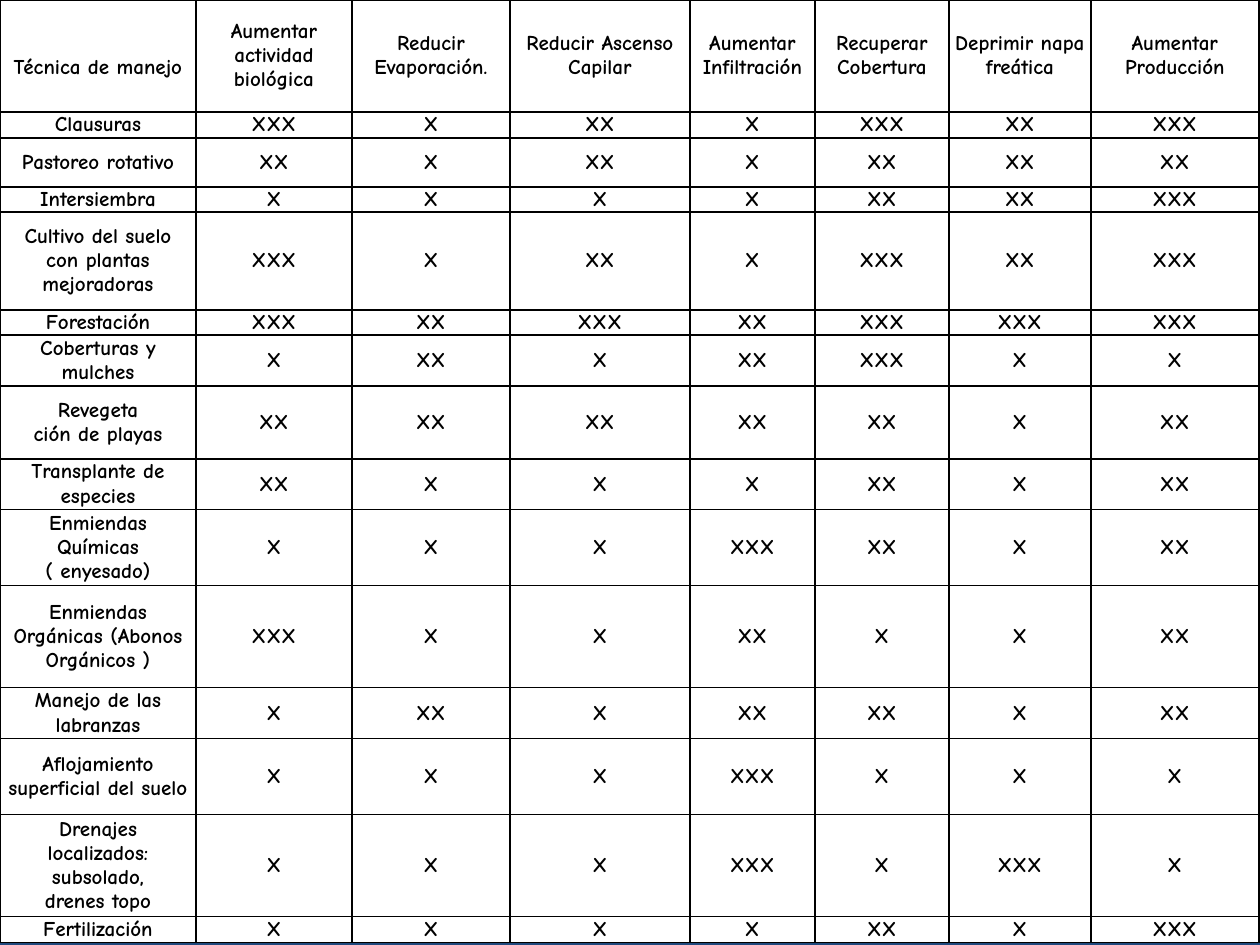
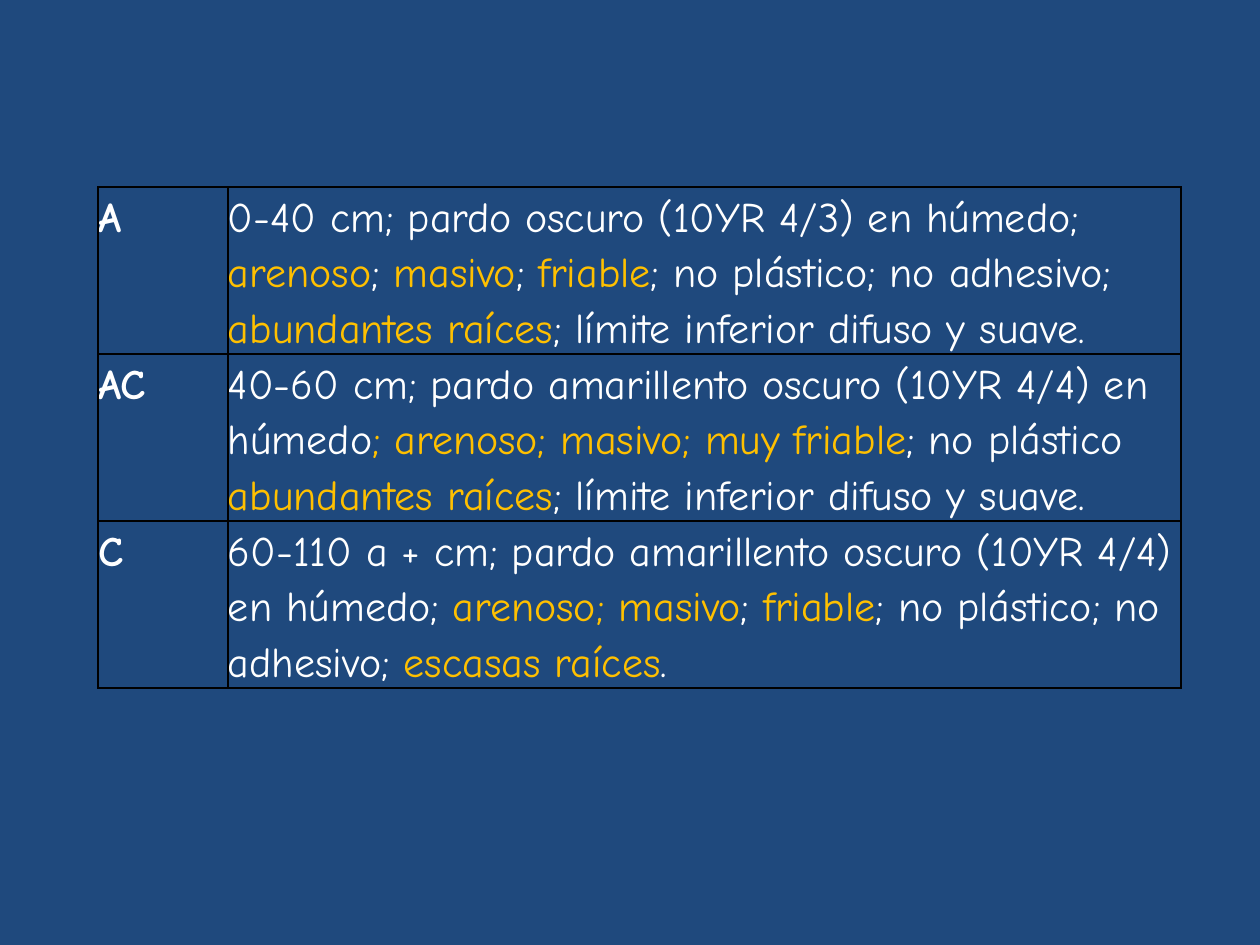
"""Builds two slides of tables on soil management techniques and soil horizons."""
from dataclasses import dataclass
from typing import NamedTuple

from lxml import etree
from pptx import Presentation
from pptx import util as u
from pptx.dml.color import RGBColor
from pptx.enum import text
from pptx.oxml.ns import qn


@dataclass(frozen=True)
class Theme:
    font: str = "Comic Neue"
    background: str = "1F497D"
    paper: str = "FFFFFF"
    ink: str = "000000"
    light: str = "FFFFFF"
    highlight: str = "FFC000"
    border: str = "000000"
    border_points: int = 1
    matrix_size: int = 12
    horizon_size: int = 24
    horizon_spacing: float = 1.15
    horizon_space_after: int = 10


class Technique(NamedTuple):
    lines: tuple[str, ...]
    height: int
    scores: str


class Goal(NamedTuple):
    lines: tuple[str, ...]
    width: int


class Horizon(NamedTuple):
    name: str
    spans: tuple[str, ...]


THEME = Theme()
EMU_PER_PX = 914400 / 126
HEADER_HEIGHT = 112
HEADER_LINE = 24
CELL_SIDE = 6
HORIZON_HEIGHT = 167

GOALS = (
    Goal(("Técnica de manejo",), 196),
    Goal(("Aumentar actividad biológica",), 156),
    Goal(("Reducir", "Evaporación."), 158),
    Goal(("Reducir Ascenso Capilar",), 180),
    Goal(("Aumentar Infiltración",), 125),
    Goal(("Recuperar", "Cobertura"), 134),
    Goal(("Deprimir napa freática",), 142),
    Goal(("Aumentar", "Producción"), 168),
)

TECHNIQUES = (
    Technique(("Clausuras",), 26, "3121323"),
    Technique(("Pastoreo rotativo",), 49, "2121222"),
    Technique(("Intersiembra",), 25, "1111223"),
    Technique(("Cultivo del suelo con plantas mejoradoras",), 98, "3121323"),
    Technique(("Forestación",), 25, "3232333"),
    Technique(("Coberturas y mulches",), 51, "1212311"),
    Technique(("Revegeta", "ción de playas"), 73, "2222212"),
    Technique(("Transplante de especies",), 51, "2111212"),
    Technique(("Enmiendas Químicas ( enyesado)",), 76, "1113212"),
    Technique(("Enmiendas Orgánicas (Abonos Orgánicos )",), 102, "3112112"),
    Technique(("Manejo de las labranzas",), 51, "1212212"),
    Technique(("Aflojamiento superficial del suelo",), 76, "1113111"),
    Technique(("Drenajes localizados: subsolado,", "drenes topo"), 102, "1113131"),
    Technique(("Fertilización",), 26, "1111213"),
)

HORIZONS = (
    Horizon("A", (
        "0-40 cm; pardo oscuro (10YR 4/3) en húmedo; ", "arenoso", "; ",
        "masivo", "; ", "friable", "; no plástico; no adhesivo; ",
        "abundantes raíces", "; límite inferior difuso y suave.")),
    Horizon("AC", (
        "40-60 cm; pardo amarillento oscuro (10YR 4/4) en húmedo",
        "; arenoso; masivo; muy friable", "; no plástico ",
        "abundantes raíces", "; límite inferior difuso y suave.")),
    Horizon("C", (
        "60-110 a + cm; pardo amarillento oscuro (10YR 4/4) en húmedo; ",
        "arenoso; masivo", "; ", "friable", "; no plástico; no adhesivo; ",
        "escasas raíces", ".")),
)


def px(length: int) -> u.Emu:
    return u.Emu(round(length * EMU_PER_PX))


def add_span(para, words: str, size: int, color: str, bold: bool) -> None:
    span = para.add_run()
    span.text = words
    font = span.font
    font.name, font.size, font.bold = THEME.font, u.Pt(size), bold
    font.color.rgb = RGBColor.from_string(color)


def add_border(cell) -> None:
    properties = cell._tc.get_or_add_tcPr()
    for side in ("a:lnL", "a:lnR", "a:lnT", "a:lnB"):
        line = etree.SubElement(properties, qn(side), w=str(u.Pt(THEME.border_points)))
        fill = etree.SubElement(line, qn("a:solidFill"))
        etree.SubElement(fill, qn("a:srgbClr"), val=THEME.border)


def prepare_cell(cell, side: int, anchor, fill: str | None) -> None:
    cell.margin_left = cell.margin_right = px(side)
    cell.margin_top = cell.margin_bottom = 0
    cell.vertical_anchor = anchor
    add_border(cell)
    if fill:
        cell.fill.solid()
        cell.fill.fore_color.rgb = RGBColor.from_string(fill)
    else:
        cell.fill.background()


def add_grid(page, left: int, top: int, widths: list[int], heights: list[int]):
    frame = page.shapes.add_table(
        len(heights), len(widths), px(left), px(top), px(sum(widths)), px(sum(heights)))
    grid = frame.table
    grid.first_row = grid.horz_banding = False
    for column, width in zip(grid.columns, widths):
        column.width = px(width)
    for row, height in zip(grid.rows, heights):
        row.height = px(height)
    return grid


def fill_matrix_cell(cell, lines: tuple[str, ...]) -> None:
    prepare_cell(cell, CELL_SIDE, text.MSO_ANCHOR.MIDDLE, THEME.paper)
    box = cell.text_frame
    for index, line in enumerate(lines):
        para = box.add_paragraph() if index else box.paragraphs[0]
        para.alignment = text.PP_ALIGN.CENTER
        add_span(para, line, THEME.matrix_size, THEME.ink, True)


def fill_horizon_cell(cell, spans: tuple[str, ...], anchor, bold: bool) -> None:
    prepare_cell(cell, 0, anchor, None)
    para = cell.text_frame.paragraphs[0]
    para.line_spacing = THEME.horizon_spacing
    para.space_after = u.Pt(THEME.horizon_space_after)
    for index, words in enumerate(spans):
        color = THEME.highlight if index % 2 else THEME.light
        add_span(para, words, THEME.horizon_size, color, bold)


def build_techniques(page) -> None:
    heights = [HEADER_HEIGHT] + [technique.height for technique in TECHNIQUES]
    grid = add_grid(page, 0, 0, [goal.width for goal in GOALS], heights)
    rows = [[goal.lines for goal in GOALS]]
    for technique in TECHNIQUES:
        rows.append([technique.lines] + [("X" * int(score),) for score in technique.scores])
    for row, contents in enumerate(rows):
        for column, lines in enumerate(contents):
            fill_matrix_cell(grid.cell(row, column), lines)
    grid.cell(0, 0).margin_top = px(HEADER_LINE)


def build_horizons(page) -> None:
    grid = add_grid(page, 98, 187, [130, 953], [HORIZON_HEIGHT] * len(HORIZONS))
    for row, horizon in enumerate(HORIZONS):
        fill_horizon_cell(grid.cell(row, 0), (horizon.name,), text.MSO_ANCHOR.TOP, True)
        fill_horizon_cell(grid.cell(row, 1), horizon.spans, text.MSO_ANCHOR.MIDDLE, False)


def main() -> None:
    deck = Presentation()
    deck.slide_width, deck.slide_height = px(1260), px(945)
    backdrop = deck.slide_master.background.fill
    backdrop.solid()
    backdrop.fore_color.rgb = RGBColor.from_string(THEME.background)
    for build in (build_techniques, build_horizons):
        build(deck.slides.add_slide(deck.slide_layouts[6]))
    deck.save("out.pptx")


if __name__ == "__main__":
    main()
